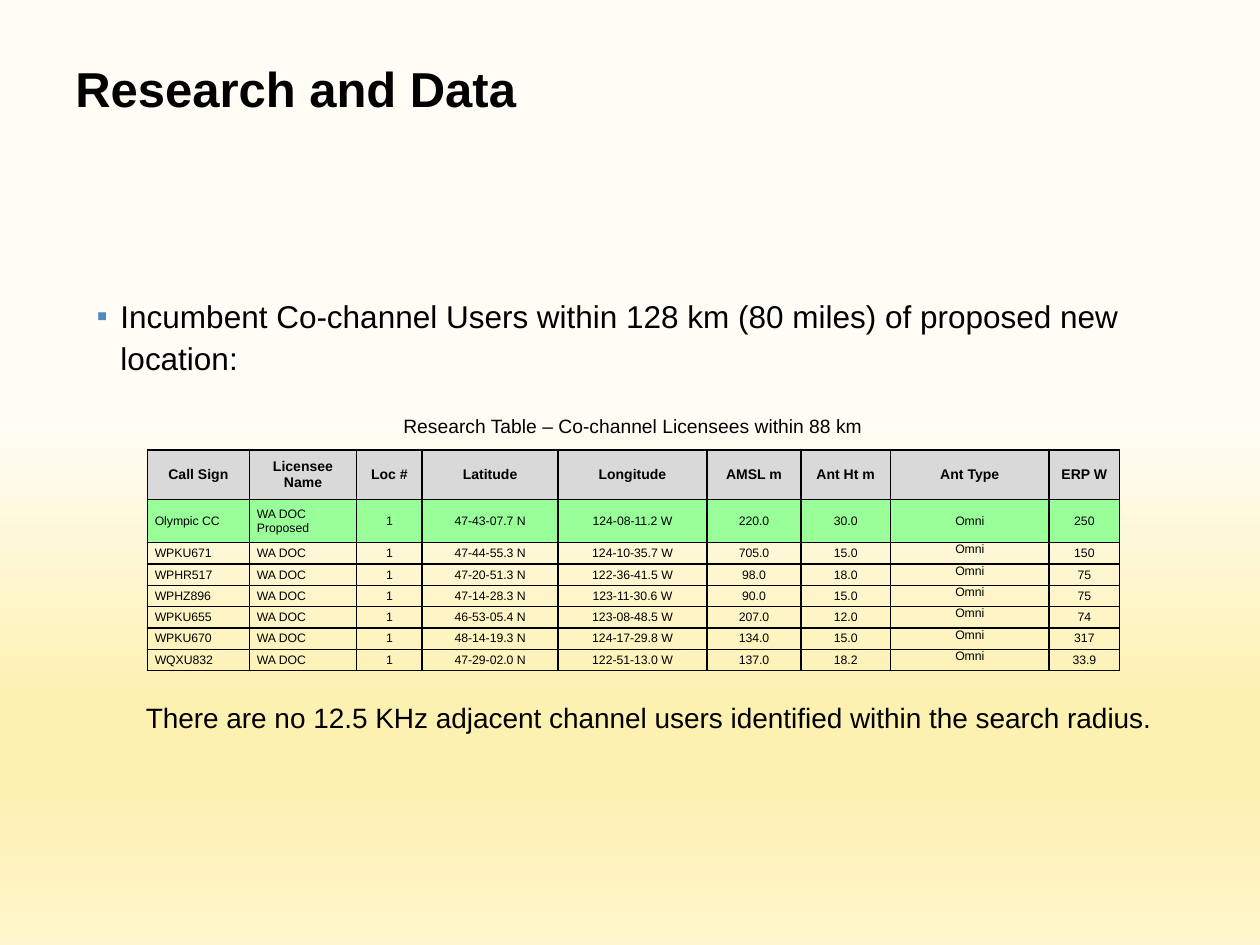
from lxml.etree import SubElement
from pptx import Presentation
from pptx.dml.color import RGBColor
from pptx.enum.text import MSO_ANCHOR as Anchor, PP_ALIGN as Align
from pptx.oxml import parse_xml
from pptx.oxml.ns import nsdecls, qn
from pptx.util import Cm, Pt

FONT = "Arial"
BLACK = RGBColor(0x00, 0x00, 0x00)
GREY = RGBColor(0xD9, 0xD9, 0xD9)
GREEN = RGBColor(0x99, 0xFF, 0x99)
BLUE = RGBColor(0x4E, 0x8A, 0xBE)
IVORY = RGBColor(0xFF, 0xFD, 0xF6)
YELLOW = RGBColor(0xFD, 0xF1, 0xB2)
CREAM = RGBColor(0xFE, 0xF5, 0xCB)

BACKGROUND_STOPS = [(44, IVORY), (74, YELLOW), (83, YELLOW), (100, CREAM)]
COLUMN_WIDTHS = [2.06, 2.16, 1.32, 2.74, 3, 1.9, 1.8, 3.2, 1.42]
ROW_HEIGHTS = [1, 0.87] + [0.43] * 6
ANT_TYPE = 7
LICENSEES = [
    ["Call Sign", "Licensee Name", "Loc #", "Latitude", "Longitude",
     "AMSL m", "Ant Ht m", "Ant Type", "ERP W"],
    ["Olympic CC", "WA DOC Proposed", "1", "47-43-07.7 N", "124-08-11.2 W",
     "220.0", "30.0", "Omni", "250"],
    ["WPKU671", "WA DOC", "1", "47-44-55.3 N", "124-10-35.7 W", "705.0", "15.0", "Omni", "150"],
    ["WPHR517", "WA DOC", "1", "47-20-51.3 N", "122-36-41.5 W", "98.0", "18.0", "Omni", "75"],
    ["WPHZ896", "WA DOC", "1", "47-14-28.3 N", "123-11-30.6 W", "90.0", "15.0", "Omni", "75"],
    ["WPKU655", "WA DOC", "1", "46-53-05.4 N", "123-08-48.5 W", "207.0", "12.0", "Omni", "74"],
    ["WPKU670", "WA DOC", "1", "48-14-19.3 N", "124-17-29.8 W", "134.0", "15.0", "Omni", "317"],
    ["WQXU832", "WA DOC", "1", "47-29-02.0 N", "122-51-13.0 W", "137.0", "18.2", "Omni", "33.9"],
]


def paint_background(s):
    fill = s.background.fill
    fill.gradient()
    grad = s.element.find(".//" + qn("a:gradFill"))
    for child in list(grad):
        grad.remove(child)
    stops = SubElement(grad, qn("a:gsLst"))
    for percent, color in BACKGROUND_STOPS:
        stop = SubElement(stops, qn("a:gs"), pos=str(percent * 1000))
        SubElement(stop, qn("a:srgbClr"), val=str(color))
    SubElement(grad, qn("a:lin"), ang="5400000", scaled="0")


def style_text(p, size, bold=False):
    for r in p.runs:
        r.font.name = FONT
        r.font.size = Pt(size)
        r.font.bold = bold
        r.font.color.rgb = BLACK


def add_text(s, box, text, size, bold=False, align=Align.LEFT, anchor=Anchor.TOP):
    tf = s.shapes.add_textbox(*map(Cm, box)).text_frame
    tf.word_wrap = True
    tf.vertical_anchor = anchor
    tf.text = text
    p = tf.paragraphs[0]
    p.alignment = align
    style_text(p, size, bold)
    return p


def add_statement(s, box, text, size, bullet=False):
    p = add_text(s, box, text, size)
    p.line_spacing = Pt(24)
    if bullet:
        pPr = p._p.get_or_add_pPr()
        pPr.set("marL", str(Cm(0.48)))
        pPr.set("indent", str(-Cm(0.48)))
        color = SubElement(pPr, qn("a:buClr"))
        SubElement(color, qn("a:srgbClr"), val=str(BLUE))
        SubElement(pPr, qn("a:buFont"), typeface=FONT)
        SubElement(pPr, qn("a:buChar"), char="▪")


def add_borders(cell):
    tcPr = cell._tc.get_or_add_tcPr()
    for side in ("lnL", "lnR", "lnT", "lnB"):
        tcPr.append(parse_xml(
            f'<a:{side} {nsdecls("a")} w="{Pt(1)}"><a:solidFill>'
            f'<a:srgbClr val="{BLACK}"/></a:solidFill></a:{side}>'))


def fill_cell(cell, text, row, column):
    header = row == 0
    cell.margin_left = cell.margin_right = Cm(0.15)
    cell.margin_top = cell.margin_bottom = 0
    top = column == ANT_TYPE and row > 1
    cell.vertical_anchor = Anchor.TOP if top else Anchor.MIDDLE
    add_borders(cell)
    if row < 2:
        cell.fill.solid()
        cell.fill.fore_color.rgb = GREY if header else GREEN
    else:
        cell.fill.background()
    cell.text = text
    p = cell.text_frame.paragraphs[0]
    p.alignment = Align.CENTER if header or column > 1 else Align.LEFT
    style_text(p, 8 if header else 7, header)


def add_licensee_table(s, left, top):
    table = s.shapes.add_table(
        len(ROW_HEIGHTS), len(COLUMN_WIDTHS), Cm(left), Cm(top),
        Cm(sum(COLUMN_WIDTHS)), Cm(sum(ROW_HEIGHTS))).table
    table.first_row = table.horz_banding = False
    for column, width in zip(table.columns, COLUMN_WIDTHS):
        column.width = Cm(width)
    for row, height in zip(table.rows, ROW_HEIGHTS):
        row.height = Cm(height)
    for i, record in enumerate(LICENSEES):
        for j, text in enumerate(record):
            fill_cell(table.cell(i, j), text, i, j)


def main():
    prs = Presentation()
    prs.slide_width, prs.slide_height = Cm(25.4), Cm(19.05)
    s = prs.slides.add_slide(prs.slide_layouts[6])
    paint_background(s)
    add_text(s, (1.27, 0.61, 17.75, 2.34), "Research and Data", 28,
             bold=True, anchor=Anchor.MIDDLE)
    add_text(s, (7.59, 8.23, 10.34, 0.74),
             "Research Table – Co-channel Licensees within 88 km", 11, align=Align.CENTER)
    add_licensee_table(s, 2.97, 9.07)
    add_statement(s, (1.7, 5.77, 22.58, 1.9),
                  "Incumbent Co-channel Users within 128 km (80 miles) of proposed new location:",
                  18, bullet=True)
    add_statement(s, (2.69, 13.82, 21.59, 1.9),
                  "There are no 12.5 KHz adjacent channel users identified within the search radius.",
                  16)
    prs.save("out.pptx")


if __name__ == "__main__":
    main()
